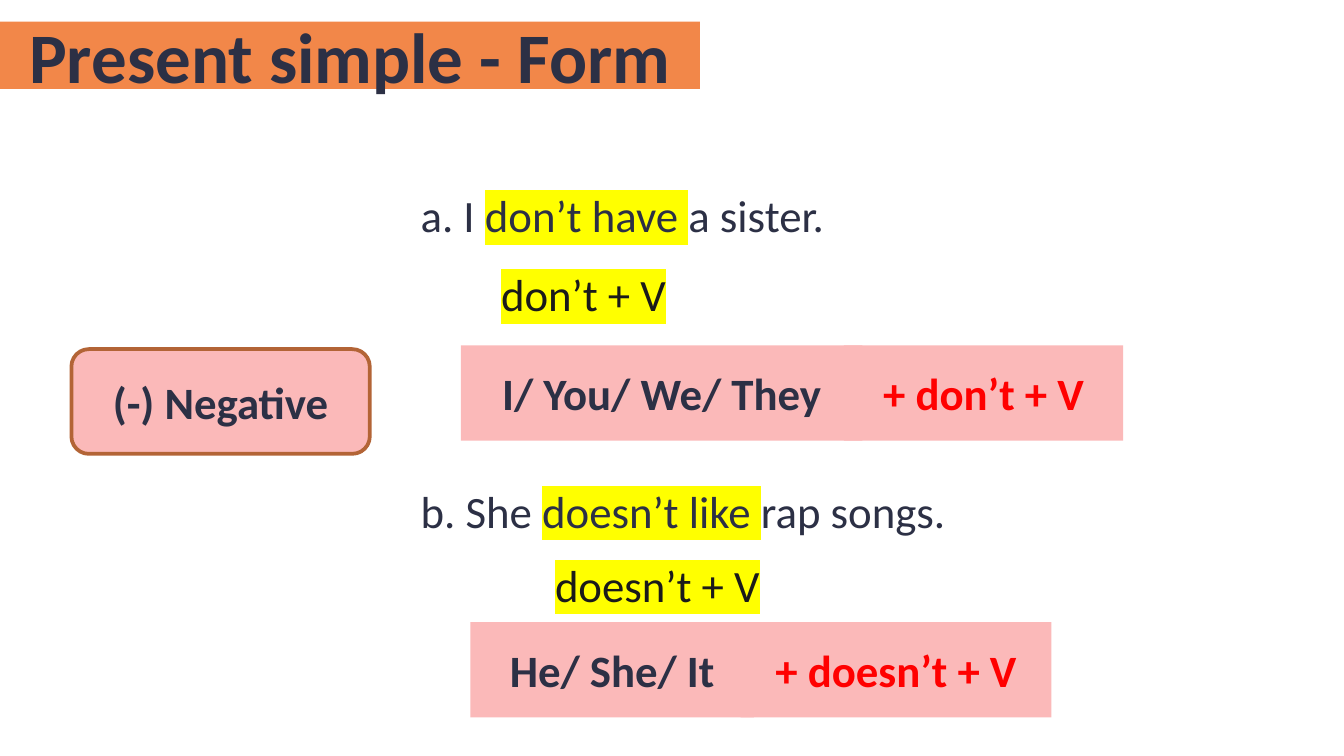
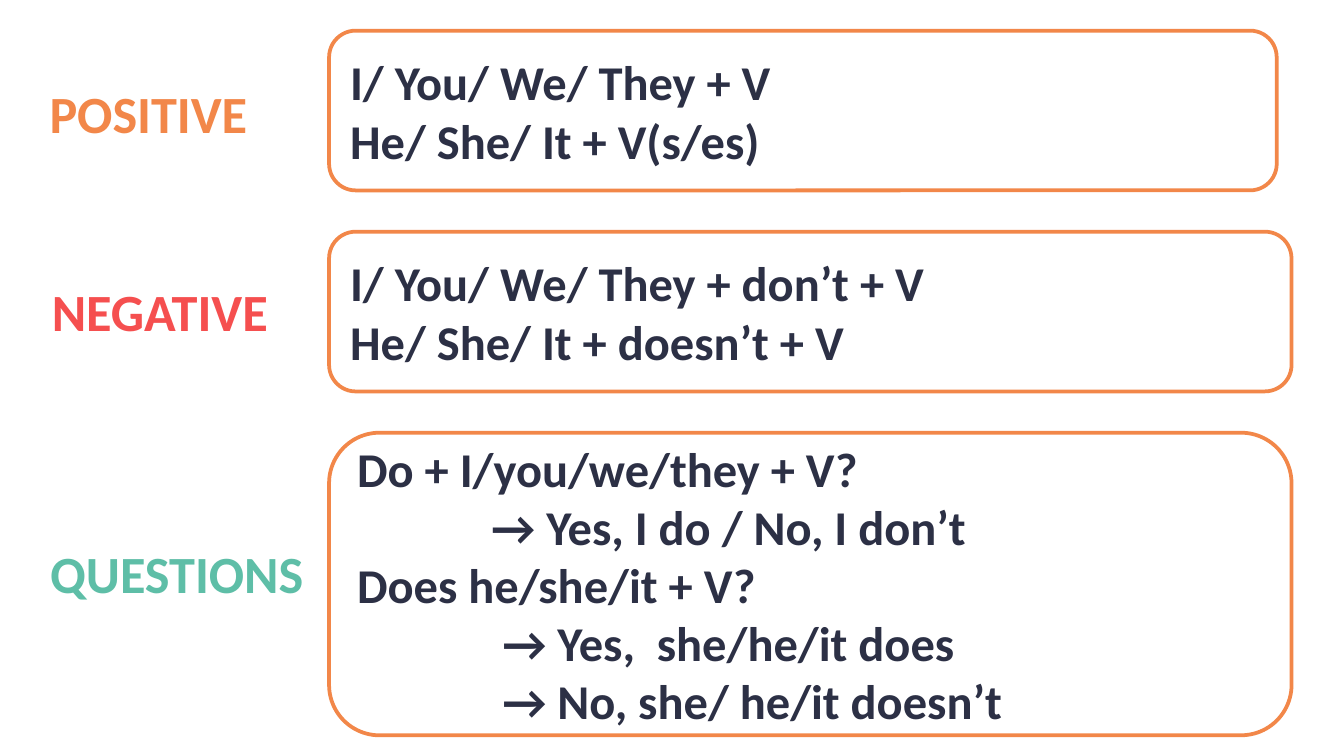
import pptx
import pptx.util
import pptx.dml.color
import pptx.enum.shapes
import pptx.enum.text
import pptx.oxml
import pptx.oxml.ns

Cm = pptx.util.Cm
Pt = pptx.util.Pt
RGBColor = pptx.dml.color.RGBColor
SHAPES = pptx.enum.shapes.MSO_SHAPE
ALIGN = pptx.enum.text.PP_ALIGN
ANCHOR = pptx.enum.text.MSO_ANCHOR
AUTO_SIZE = pptx.enum.text.MSO_AUTO_SIZE

FONT = "Calibri"
WHITE = RGBColor(0xFF, 0xFF, 0xFF)
NAVY = RGBColor(0x2C, 0x30, 0x45)
BLACK = RGBColor(0x1A, 0x1A, 0x1A)
ORANGE = RGBColor(0xF2, 0x87, 0x49)
BROWN = RGBColor(0xB3, 0x64, 0x36)
PINK = RGBColor(0xFB, 0xB9, 0xB9)
RED = RGBColor(0xFF, 0x00, 0x00)
CORAL = RGBColor(0xF5, 0x4F, 0x4F)
GREEN = RGBColor(0x5E, 0xBE, 0xA7)
YELLOW = RGBColor(0xFF, 0xFF, 0x00)

TITLE = {"size": Pt(38), "bold": True}
EXAMPLE = {"size": Pt(24), "bold": False}
RULE = {"size": Pt(24), "bold": True}
SUMMARY = {"size": Pt(26), "bold": True}
LABEL = {"size": Pt(28), "bold": True}
CENTRED = {"alignment": ALIGN.CENTER}
LEFT = {"alignment": ALIGN.LEFT}
DOUBLE = {"alignment": ALIGN.LEFT, "line_spacing": 2.0}
BLOCK_FRAME = {"word_wrap": True, "vertical_anchor": ANCHOR.MIDDLE}
TEXT_FRAME = {"word_wrap": False, "auto_size": AUTO_SIZE.SHAPE_TO_FIT_TEXT}


def set_values(target, values):
    """Set each named attribute of the target."""
    for name, value in values.items():
        setattr(target, name, value)


def add_run(paragraph, text, font_format, color, highlight=None):
    """Append a run, optionally with a highlight behind it."""
    run = paragraph.add_run()
    run.text = text
    set_values(run.font, {"name": FONT, **font_format})
    run.font.color.rgb = color
    if highlight is not None:
        mark = pptx.oxml.parse_xml(
            f'<a:highlight {pptx.oxml.ns.nsdecls("a")}><a:srgbClr val="{highlight}"/></a:highlight>')
        run.font.fill._xPr.find(pptx.oxml.ns.qn("a:solidFill")).addnext(mark)


def add_block(slide, box, fill, lines, font_format, color=NAVY, outline=None, layout=CENTRED):
    """Draw a filled box with (text, indent) lines; outlined boxes are rounded."""
    kind = SHAPES.ROUNDED_RECTANGLE if outline else SHAPES.RECTANGLE
    shape = slide.shapes.add_shape(kind, *map(Cm, box))
    shape.shadow.inherit = False
    shape.fill.solid()
    shape.fill.fore_color.rgb = fill
    if outline:
        shape.line.color.rgb = outline
        shape.line.width = Pt(2)
    else:
        shape.line.fill.background()
    frame = shape.text_frame
    set_values(frame, BLOCK_FRAME)
    for index, (text, indent) in enumerate(lines):
        paragraph = frame.add_paragraph() if index else frame.paragraphs[0]
        set_values(paragraph, layout)
        if indent:
            paragraph._p.get_or_add_pPr().set("marL", str(Cm(indent)))
        add_run(paragraph, text, font_format, color)


def add_text(slide, box, runs, font_format, layout):
    """Write one line of (text, color, highlight) runs in a text box."""
    frame = slide.shapes.add_textbox(*map(Cm, box)).text_frame
    set_values(frame, TEXT_FRAME)
    paragraph = frame.paragraphs[0]
    set_values(paragraph, layout)
    for text, color, highlight in runs:
        add_run(paragraph, text, font_format, color, highlight)


def add_example(slide, box, sentence, hint, rule):
    """Place a sentence, its highlighted pattern and the two-part rule."""
    left, top, width, height = box
    start, verb, end = sentence
    add_text(slide, box, [(start, NAVY, None), (verb, NAVY, YELLOW), (end, NAVY, None)],
             EXAMPLE, DOUBLE)
    text, dx, dy, hint_width = hint
    add_text(slide, (left + dx, top + dy, hint_width, height), [(text, BLACK, YELLOW)],
             EXAMPLE, DOUBLE)
    rule_dy, parts = rule
    for (text, dx, part_width), color in zip(parts, (NAVY, RED)):
        add_block(slide, (left + dx, top + rule_dy, part_width, 1.8), PINK,
                  [(text, 0)], RULE, color)


def add_summary(slide, box, label, lines):
    """Place a rounded form box and its label to the left."""
    left, top, width, height = box
    text, color, dy, label_width = label
    add_block(slide, box, WHITE, lines, SUMMARY, outline=ORANGE, layout=LEFT)
    add_text(slide, (left - 5.56, top + dy, label_width, 1.45), [(text, color, None)],
             LABEL, CENTRED)


def build_form_slide(slide):
    """Build the slide on negative forms."""
    add_block(slide, (0, 0.41, 13.23, 1.27), ORANGE, [("Present simple - Form", 0)], TITLE)
    add_block(slide, (1.35, 6.6, 5.64, 1.98), PINK, [("(-) Negative", 0)], RULE, outline=BROWN)
    add_example(slide, (7.7, 2.41, 8.2, 2.03),
                ("a. I ", "don’t have ", "a sister."),
                ("don’t + V", 1.52, 1.5, 3.66),
                (4.12, [("I/ You/ We/ They", 1.01, 7.59), ("+ don’t + V", 8.25, 5.28)]))
    add_example(slide, (7.7, 8, 10.52, 2.03),
                ("b. She ", "doesn’t like ", "rap songs."),
                ("doesn’t + V", 2.54, 1.4, 4.42),
                (3.76, [("He/ She/ It", 1.19, 5.36), ("+ doesn’t + V", 6.3, 5.87)]))


def build_summary_slide(slide):
    """Build the slide that sums up the three forms."""
    sections = [
        (17.91, 3.02, ("POSITIVE", ORANGE, 0.84, 4.29),
         [("I/ You/ We/ They + V", 0), ("He/ She/ It + V(s/es)", 0)]),
        (18.19, 3.02, ("NEGATIVE", CORAL, 0.77, 4.72),
         [("I/ You/ We/ They + don’t + V", 0), ("He/ She/ It + doesn’t + V", 0)]),
        (18.19, 5.72, ("QUESTIONS", GREEN, 1.93, 5.36),
         [("Do + I/you/we/they + V?", 0), ("→ Yes, I do / No, I don’t", 2.54),
          ("Does he/she/it + V?", 0), ("→ Yes,  she/he/it does", 2.75),
          ("→ No, she/ he/it doesn’t", 2.75)]),
    ]
    top, gap = 0.58, 0.78
    for width, height, label, lines in sections:
        add_summary(slide, (6.22, top, width, height), label, lines)
        top += height + gap


def main():
    """Create and save the presentation."""
    presentation = pptx.Presentation()
    set_values(presentation, {"slide_width": Cm(25.4), "slide_height": Cm(14.29)})
    for build in (build_form_slide, build_summary_slide):
        build(presentation.slides.add_slide(presentation.slide_layouts[6]))
    presentation.save("out.pptx")


if __name__ == "__main__":
    main()
